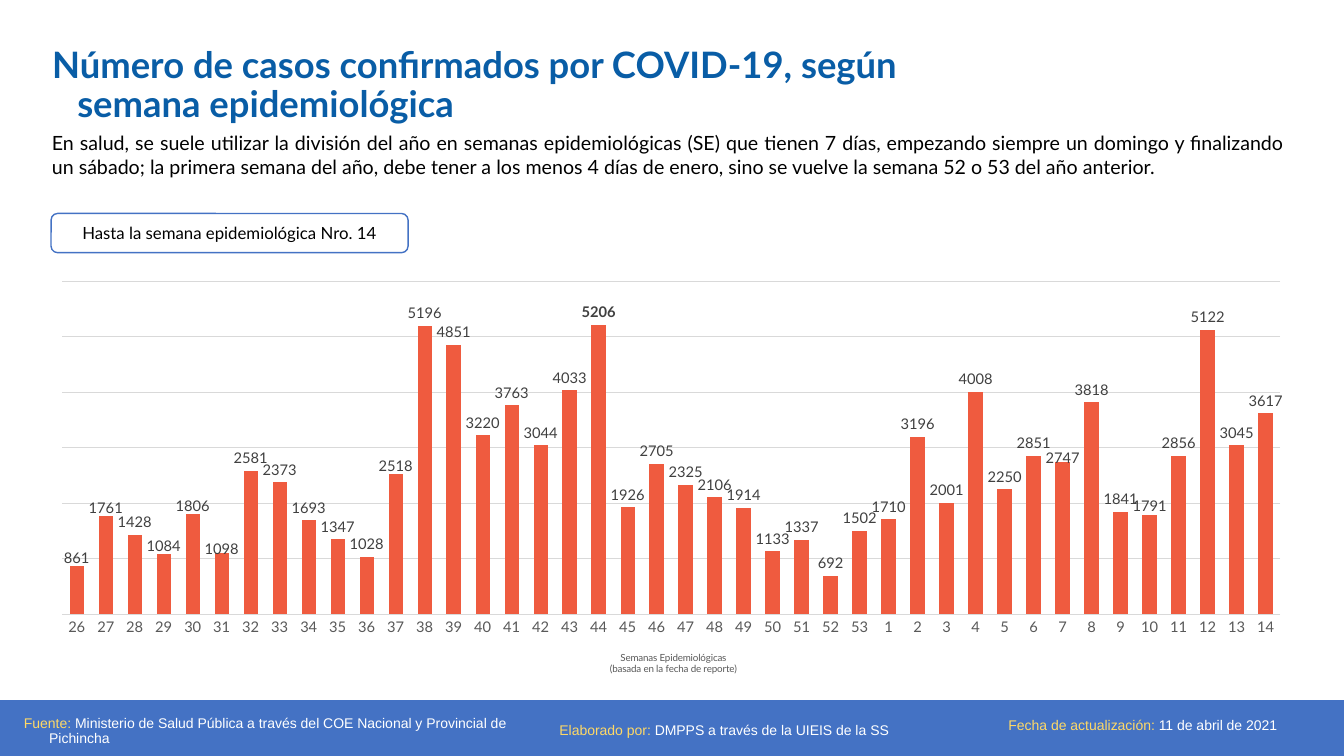
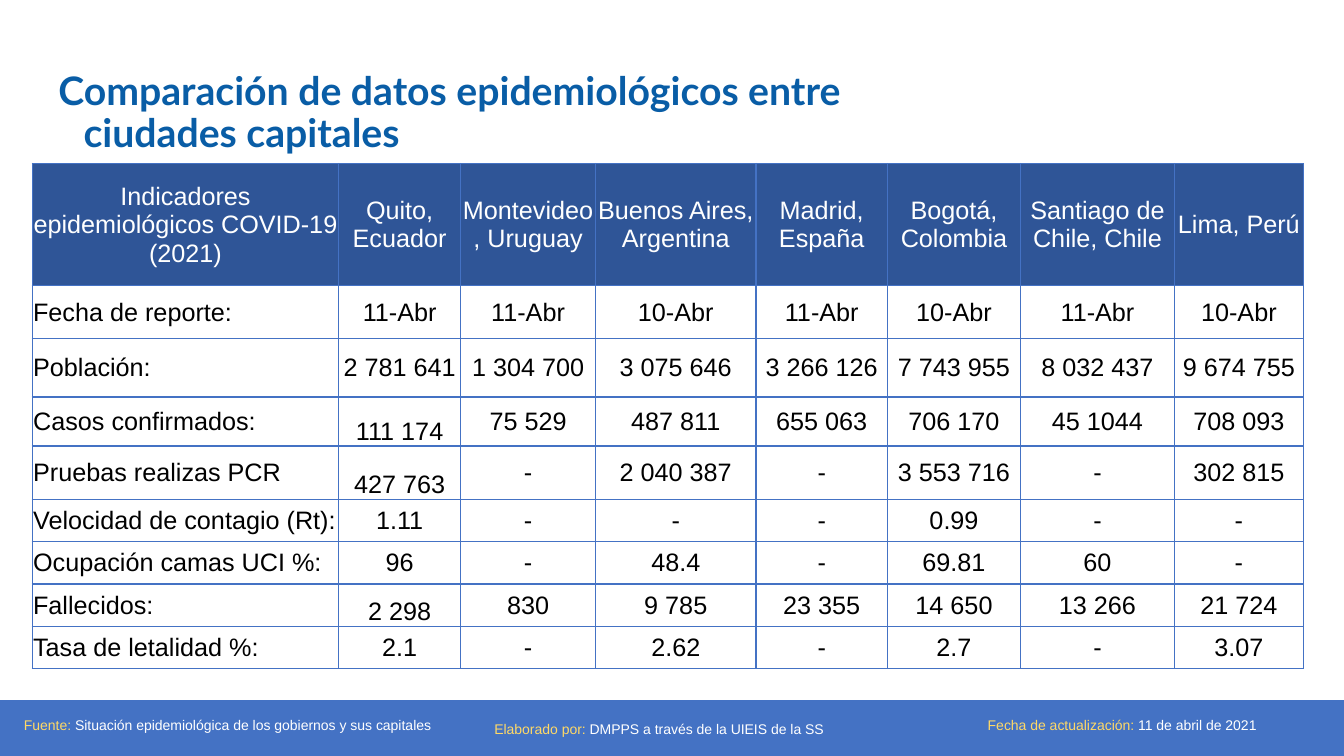
from pptx import Presentation
from pptx.chart.data import CategoryChartData as Data
from pptx.dml.color import RGBColor as RGB
from pptx.enum.chart import XL_CHART_TYPE as Kind, XL_LABEL_POSITION as Spot, XL_TICK_MARK as Tick
from pptx.enum.shapes import MSO_SHAPE as Form
from pptx.enum.text import MSO_ANCHOR as Anchor, MSO_AUTO_SIZE as Auto, PP_ALIGN as Align
from pptx.oxml import parse_xml
from pptx.oxml.ns import nsdecls, qn
from pptx.util import Pt

BLUE, NAVY, DEEP = "4472C4", "2F5597", "095DA6"
GOLD, WHITE, BLACK = "FFD966", "FFFFFF", "000000"
CORAL, GRID, GREY, DARK = "EF5B3F", "D9D9D9", "595959", "404040"
HANG = 18
WEEKS = [*range(26, 54), *range(1, 15)]
CASES = [
    861, 1761, 1428, 1084, 1806, 1098, 2581, 2373, 1693, 1347, 1028, 2518, 5196, 4851,
    3220, 3763, 3044, 4033, 5206, 1926, 2705, 2325, 2106, 1914, 1133, 1337, 692, 1502,
    1710, 3196, 2001, 4008, 2250, 2851, 2747, 3818, 1841, 1791, 2856, 5122, 3045, 3617,
]
SHIFTS = {0: 0.01, 1: 0.01, 3: 0.01, 4: 0.01, 5: 0.02, 11: 0.01, 34: 0.02, 37: 0.01}
COLS = [219, 87, 96.5, 114.5, 94, 95, 110, 92]
ROWS = [87.5, 37.5, 42, 35, 38] + [30.25] * 4
LOW = {(3, 1), (4, 1), (7, 1)}
CELLS = [
    ["Indicadores epidemiológicos COVID-19 (2021)", "Quito, Ecuador", "Montevideo, Uruguay",
     "Buenos Aires, Argentina", "Madrid, España", "Bogotá, Colombia",
     "Santiago de Chile, Chile", "Lima, Perú"],
    ["Fecha de reporte:", "11-Abr", "11-Abr", "10-Abr", "11-Abr", "10-Abr", "11-Abr", "10-Abr"],
    ["Población:", "2 781 641", "1 304 700", "3 075 646", "3 266 126", "7 743 955",
     "8 032 437", "9 674 755"],
    ["Casos confirmados:", "111 174", "75 529", "487 811", "655 063", "706 170", "45 1044",
     "708 093"],
    ["Pruebas realizas PCR", "427 763", "-", "2 040 387", "-", "3 553 716", "-", "302 815"],
    ["Velocidad de contagio (Rt):", "1.11", "-", "-", "-", "0.99", "-", "-"],
    ["Ocupación camas UCI %:", "96", "-", "48.4", "-", "69.81", "60", "-"],
    ["Fallecidos:", "2 298", "830", "9 785", "23 355", "14 650", "13 266", "21 724"],
    ["Tasa de letalidad %:", "2.1", "-", "2.62", "-", "2.7", "-", "3.07"],
]


def hue(code):
    return RGB.from_string(code)


def style(font, size, color, face="Lato", bold=False):
    font.name, font.size, font.bold = face, Pt(size), bold
    font.color.rgb = hue(color)


def write(frame, text, size=10, color=BLACK, face="Lato", bold=False,
          align=Align.LEFT, hang=0, gap=None):
    runs = [(text, color)] if isinstance(text, str) else text
    par = frame.paragraphs[0]
    par.alignment = align
    if gap:
        par.line_spacing = gap
    if hang:
        props = par._p.get_or_add_pPr()
        props.set("marL", str(Pt(hang)))
        props.set("indent", str(-Pt(hang)))
    for words, tint in runs:
        run = par.add_run()
        run.text = words
        style(run.font, size, tint, face, bold)


def box(slide, area, text, anchor=Anchor.TOP, **kind):
    frame = slide.shapes.add_textbox(*map(Pt, area)).text_frame
    frame.word_wrap = True
    frame.vertical_anchor = anchor
    write(frame, text, **kind)


def shape(slide, form, area, fill=None, line=None):
    item = slide.shapes.add_shape(form, *map(Pt, area))
    item.shadow.inherit = False
    for paint, tint in ((item.fill, fill), (item.line.fill, line)):
        if tint:
            paint.solid()
            paint.fore_color.rgb = hue(tint)
        else:
            paint.background()
    if line:
        item.line.width = Pt(1)
    return item


def title(slide, area, text, size):
    head = slide.shapes.title
    head.left, head.top, head.width, head.height = map(Pt, area)
    frame = head.text_frame
    frame.auto_size = Auto.NONE
    frame.word_wrap = True
    frame.vertical_anchor = Anchor.TOP
    write(frame, text, size=size, color=DEEP, bold=True, hang=HANG, gap=0.9)


def footer(slide, source, areas):
    shape(slide, Form.RECTANGLE, (0, 500, 960, 40), fill=BLUE)
    notes = [
        ("Fuente: ", source, Align.LEFT),
        ("Elaborado por: ", "DMPPS a través de la UIEIS de la SS", Align.LEFT),
        ("Fecha de actualización: ", "11 de abril de 2021", Align.CENTER),
    ]
    for area, (label, text, align) in zip(areas, notes):
        box(slide, area, [(label, GOLD), (text, WHITE)], anchor=Anchor.MIDDLE,
            face="Arial", align=align, hang=HANG, gap=0.9)


def place(node, index, edge=True, inner=False, **sides):
    for old in node.findall(qn("c:layout")):
        node.remove(old)
    parts = '<c:layoutTarget val="inner"/>' if inner else ""
    if edge:
        parts += '<c:xMode val="edge"/><c:yMode val="edge"/>'
    parts += "".join(f'<c:{key} val="{val}"/>' for key, val in sides.items())
    node.insert(index, parse_xml(
        f'<c:layout {nsdecls("c")}><c:manualLayout>{parts}</c:manualLayout></c:layout>'))


def labels(series):
    tags = series.data_labels
    tags.show_value = True
    tags.position = Spot.OUTSIDE_END
    style(tags.font, 10.5, DARK)
    top = CASES.index(max(CASES))
    for spot in sorted([*SHIFTS, top]):
        tag = series.points[spot].data_label
        style(tag.font, 10.5, DARK, bold=spot == top)
        tag.position = Spot.OUTSIDE_END
    for node in series._element.iter(qn("c:dLbl")):
        spot = int(node.find(qn("c:idx")).get("val"))
        if spot in SHIFTS:
            place(node, 1, edge=False, x=0, y=SHIFTS[spot])


def graph(slide, area):
    data = Data()
    data.categories = [str(week) for week in WEEKS]
    data.add_series("Casos", CASES)
    chart = slide.shapes.add_chart(Kind.COLUMN_CLUSTERED, *map(Pt, area), data).chart
    chart.has_legend = chart.has_title = False
    style(chart.font, 10.5, BLACK)
    plot = chart.plots[0]
    plot.gap_width = 100
    plot.vary_by_categories = False
    series = plot.series[0]
    series.format.fill.solid()
    series.format.fill.fore_color.rgb = hue(CORAL)
    labels(series)

    base, scale = chart.category_axis, chart.value_axis
    base.major_tick_mark = Tick.NONE
    style(base.tick_labels.font, 10.5, GREY)
    scale.minimum_scale, scale.maximum_scale, scale.major_unit = 0, 6000, 1000
    scale.has_major_gridlines = True
    scale.visible = False
    for line in (base.format.line, scale.major_gridlines.format.line):
        line.color.rgb = hue(GRID)
        line.width = Pt(0.75)

    frame = base.axis_title.text_frame
    write(frame, "Semanas Epidemiológicas", size=7, color=GREY, align=Align.CENTER)
    par = frame.add_paragraph()
    par.alignment = Align.CENTER
    run = par.add_run()
    run.text = "(basada en la fecha de reporte)"
    style(run.font, 7, GREY)
    place(base.axis_title._element, 1, x=0.45, y=0.87)
    area = next(chart._chartSpace.iter(qn("c:plotArea")))
    place(area, 0, inner=True, x=0.028, y=0.043, w=0.944, h=0.753)


def border(cell):
    props = cell._tc.get_or_add_tcPr()
    for side in "LRTB":
        props.append(parse_xml(
            f'<a:ln{side} {nsdecls("a")} w="{Pt(1)}"><a:solidFill>'
            f'<a:srgbClr val="{BLUE}"/></a:solidFill></a:ln{side}>'))


def table(slide, left, top):
    grid = slide.shapes.add_table(len(ROWS), len(COLS), Pt(left), Pt(top),
                                  Pt(sum(COLS)), Pt(sum(ROWS))).table
    grid.horz_banding = False
    for col, width in zip(grid.columns, COLS):
        col.width = Pt(width)
    for row, height in zip(grid.rows, ROWS):
        row.height = Pt(height)
    for r, line in enumerate(CELLS):
        for c, text in enumerate(line):
            cell = grid.cell(r, c)
            cell.margin_left = cell.margin_right = cell.margin_top = Pt(0.7)
            cell.margin_bottom = Pt(0)
            cell.vertical_anchor = Anchor.BOTTOM if (r, c) in LOW else Anchor.MIDDLE
            border(cell)
            cell.fill.solid()
            cell.fill.fore_color.rgb = hue(WHITE if r else NAVY)
            write(cell.text_frame, text, size=18, face="Arial",
                  color=BLACK if r else WHITE,
                  align=Align.LEFT if r and not c else Align.CENTER)


def weekly(slide):
    footer(slide, "Ministerio de Salud Pública a través del COE Nacional y Provincial de Pichincha",
           [(10, 505, 362, 34.5), (392.5, 507, 330, 31), (695, 499, 242.5, 39.5)])
    title(slide, (30, 30, 703.5, 62.5),
          "Número de casos confirmados por COVID-19, según semana epidemiológica", 26)
    box(slide, (30, 90, 895, 58),
        "En salud, se suele utilizar la división del año en semanas epidemiológicas (SE) que "
        "tienen 7 días, empezando siempre un domingo y finalizando un sábado; la primera semana "
        "del año, debe tener a los menos 4 días de enero, sino se vuelve la semana 52 o 53 del "
        "año anterior.", size=14, align=Align.JUSTIFY)
    badge = shape(slide, Form.ROUNDED_RECTANGLE, (36.5, 152.5, 255, 28), line=BLUE)
    badge.text_frame.vertical_anchor = Anchor.MIDDLE
    write(badge.text_frame, "Hasta la semana epidemiológica Nro. 14", size=12,
          align=Align.CENTER)
    graph(slide, (18.7, 187.2, 921.6, 316))


def cities(slide):
    footer(slide, "Situación epidemiológica de los gobiernos y sus capitales",
           [(10, 504, 311, 29), (346, 507, 311, 29), (666, 499, 271, 39.5)])
    title(slide, (34.5, 47.5, 674.5, 77),
          "Comparación de datos epidemiológicos entre ciudades capitales", 28)
    table(slide, 23, 116.7)


def main():
    deck = Presentation()
    deck.slide_width, deck.slide_height = Pt(960), Pt(540)
    for build in (weekly, cities):
        build(deck.slides.add_slide(deck.slide_layouts[5]))
    deck.save("out.pptx")


if __name__ == "__main__":
    main()
